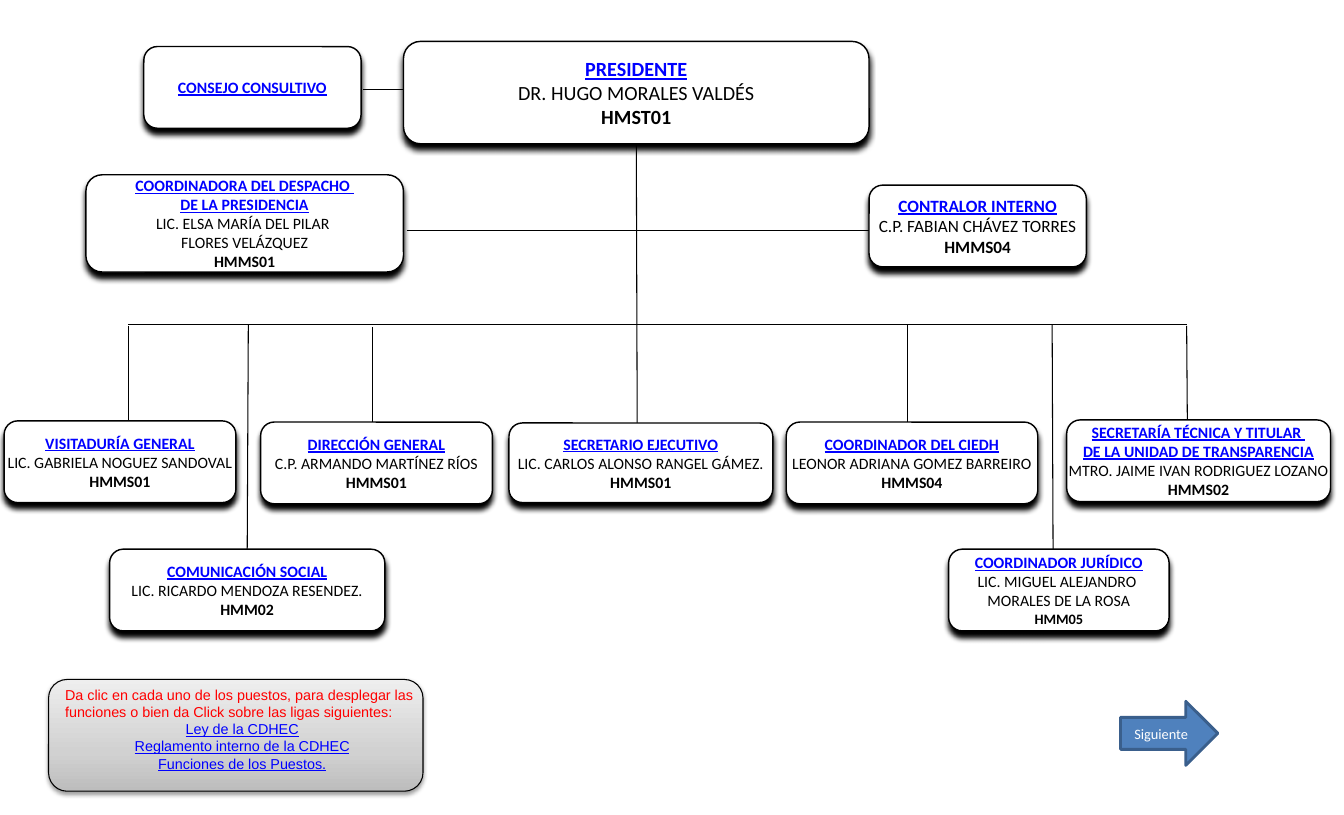
from copy import deepcopy

from pptx import Presentation
from pptx.dml.color import RGBColor
from pptx.enum import shapes, text
from pptx.oxml import parse_xml
from pptx.oxml.ns import nsdecls, qn
from pptx.util import Pt

HUES = {
    "ink": "000000", "paper": "FFFFFF", "link": "0000FF", "hint": "FF0000",
    "arrow": "4F81BD", "edge": "3A5F8C",
    "dark": "BDBDBD", "mid": "D1D1D1", "pale": "EEEEEE",
}
WIDE, HIGH = 935.28, 567.36
TALL = 56.9  # usual height of a post
BAR = 226.1  # height at which the posts branch off
AIDE = 160.6  # height of the line between the two aides

# left, top, width, height, size, titles, names, code
POSTS = {
    "general": (181.4, 293.8, 161.3, TALL, 11, ["DIRECCIÓN GENERAL"],
                ["C.P. ARMANDO MARTÍNEZ RÍOS"], "HMMS01"),
    "visits": (2.9, 293, 161.3, TALL, 11, ["VISITADURÍA GENERAL"],
               ["LIC. GABRIELA NOGUEZ SANDOVAL"], "HMMS01"),
    "head": (280.8, 28.8, 324, 71.3, 14, ["PRESIDENTE"],
             ["DR. HUGO MORALES VALDÉS"], "HMST01"),
    "audit": (604.8, 128.9, 151.2, TALL, 12, ["CONTRALOR INTERNO"],
              ["C.P. FABIAN CHÁVEZ TORRES"], "HMMS04"),
    "legal": (660.2, 382.3, 153.4, TALL, 11, ["COORDINADOR JURÍDICO"],
              ["LIC. MIGUEL ALEJANDRO ", "MORALES DE LA ROSA"], "HMM05"),
    "council": (100.1, 32.4, 151.2, TALL, 11, ["CONSEJO CONSULTIVO"], [], ""),
    "office": (59.8, 121.7, 221, 67.7, 11,
               ["COORDINADORA DEL DESPACHO ", "DE LA PRESIDENCIA"],
               ["LIC. ELSA MARÍA DEL PILAR ", "FLORES VELÁZQUEZ"], "HMMS01"),
    "press": (76.3, 382.3, 191.5, TALL, 11, ["COMUNICACIÓN SOCIAL"],
              ["LIC. RICARDO MENDOZA RESENDEZ."], "HMM02"),
    "tech": (742.3, 292.3, 183.6, TALL, 11,
             ["SECRETARÍA TÉCNICA Y TITULAR ", "DE LA UNIDAD DE TRANSPARENCIA"],
             ["MTRO. JAIME IVAN RODRIGUEZ LOZANO"], "HMMS02"),
    "centre": (547.2, 293.8, 175, TALL, 11, ["COORDINADOR DEL CIEDH"],
               ["LEONOR ADRIANA GOMEZ BARREIRO"], "HMMS04"),
    "chief": (354.2, 294.5, 183.6, 55.4, 11, ["SECRETARIO EJECUTIVO"],
              ["LIC. CARLOS ALONSO RANGEL GÁMEZ."], "HMMS01"),
}
# start x, start y, end x, end y
LINES = {
    "legal": (732.2, BAR, 733, 418.3),
    "press": (172.8, BAR, 173.5, 418.3),
    "council": (252.7, 62.6, 342.7, 62.6),
    "audit": (502.6, AIDE, 734.4, AIDE),
    "spine": (442.8, 92.9, 443.5, 310.3),
    "tech": (825.8, 226.8, 826.6, 335.5),
    "centre": (631.4, BAR, 631.4, 334.8),
    "general": (259.2, 227.5, 259.2, 336.2),
    "visits": (89.3, 226.8, 89.3, 335.5),
    "bar": (89.3, BAR, 825.8, BAR),
    "office": (283, AIDE, 502.6, AIDE),
}


def hue(name):
    return RGBColor.from_string(HUES[name])


def style(para, size, tint, font="Calibri", bold=False, under=False):
    for run in para.runs:
        run.font.name, run.font.size = font, Pt(size)
        run.font.color.rgb = hue(tint)
        run.font.bold, run.font.underline = bold, under


def shade(shape, blur, drop, alpha):
    """Give the shape a soft shadow that falls straight down."""
    shape.shadow.inherit = False
    shape._element.spPr.find(qn("a:effectLst")).append(parse_xml(
        f'<a:outerShdw {nsdecls("a")} blurRad="{Pt(blur)}" dist="{Pt(drop)}" '
        f'dir="5400000" rotWithShape="0"><a:srgbClr val="{HUES["ink"]}">'
        f'<a:alpha val="{alpha * 1000}"/></a:srgbClr></a:outerShdw>'))


def block(slide, kind, box, edge, width):
    shape = slide.shapes.add_shape(kind, *map(Pt, box))
    shape.shadow.inherit = False
    shape.line.color.rgb, shape.line.width = hue(edge), Pt(width)
    return shape


def link(slide, left, top, ends):
    x1, y1, x2, y2 = ends
    line = slide.shapes.add_connector(
        shapes.MSO_CONNECTOR.STRAIGHT,
        Pt(left + x1), Pt(top + y1), Pt(left + x2), Pt(top + y2))
    line.line.color.rgb, line.line.width = hue("ink"), Pt(0.75)
    line._element.spPr.append(parse_xml(f'<a:effectLst {nsdecls("a")}/>'))
    return line


def post(slide, box, size, titles, names, code):
    shape = block(slide, shapes.MSO_SHAPE.ROUNDED_RECTANGLE, box, "ink", 1)
    shape.fill.solid()
    shape.fill.fore_color.rgb = hue("paper")
    shade(shape, 4, 4, 100)
    frame = shape.text_frame
    frame.text = "\n".join(titles + names + ([code] if code else []))
    frame.word_wrap = False
    frame.vertical_anchor = text.MSO_ANCHOR.MIDDLE
    frame.margin_left = frame.margin_right = Pt(12)
    frame.margin_top = frame.margin_bottom = Pt(6.5)
    for i, para in enumerate(frame.paragraphs):
        para.alignment = text.PP_ALIGN.CENTER
        title = i < len(titles)
        last = i == len(titles + names)
        small = last and code == "HMM05"
        style(para, 10 if small else size, "link" if title else "ink",
              bold=title or last, under=title)
    return shape


def chart(slide, box):
    left, top = box[:2]
    lines = {key: link(slide, left, top, ends) for key, ends in LINES.items()}
    posts = {key: post(slide, (left + x, top + y, w, h), *rest)
             for key, (x, y, w, h, *rest) in POSTS.items()}
    lines["spine"].begin_connect(posts["head"], 2)
    lines["press"].end_connect(posts["press"], 0)


def note(slide, box):
    left, top, wide, high = box
    panel = block(slide, shapes.MSO_SHAPE.ROUNDED_RECTANGLE, box, "ink", 0.75)
    panel.fill.gradient()
    panel.fill.gradient_angle = 90
    stops = panel._element.spPr.find(".//" + qn("a:gsLst"))
    stops.insert(1, deepcopy(stops[0]))
    marks = [("dark", 0), ("mid", 0.35), ("pale", 1)]
    for stop, (tint, place) in zip(panel.fill.gradient_stops, marks):
        stop.color.rgb, stop.position = hue(tint), place
    shade(panel, 3.1, 1.6, 38)

    label = slide.shapes.add_textbox(
        Pt(left + 4.4), Pt(top + 0.8), Pt(wide), Pt(high - 10.1))
    frame = label.text_frame
    frame.word_wrap = True
    frame.text = "\n".join([
        "Da clic en cada uno de los puestos, para desplegar las funciones "
        "o bien da Click sobre las ligas siguientes:",
        "Ley de la CDHEC",
        "Reglamento interno de la CDHEC",
        "Funciones de los Puestos.",
    ])
    hint, *links = frame.paragraphs
    style(hint, 10, "hint", "Arial")
    for para in links:
        para.alignment = text.PP_ALIGN.CENTER
        style(para, 10, "link", "Arial", under=True)


def arrow(slide, box):
    shape = block(slide, shapes.MSO_SHAPE.RIGHT_ARROW, box, "edge", 2)
    shape.fill.solid()
    shape.fill.fore_color.rgb = hue("arrow")
    frame = shape.text_frame
    frame.text = "Siguiente"
    frame.vertical_anchor = text.MSO_ANCHOR.MIDDLE
    frame.paragraphs[0].alignment = text.PP_ALIGN.CENTER
    style(frame.paragraphs[0], 10, "paper")


def main():
    deck = Presentation()
    deck.slide_width, deck.slide_height = Pt(WIDE), Pt(HIGH)
    slide = deck.slides.add_slide(deck.slide_layouts[6])
    chart(slide, (0, 0, WIDE, HIGH))
    note(slide, (33.8, 473, 260.6, 77.8))
    arrow(slide, (779.8, 488.2, 67.7, 44.6))
    deck.save("out.pptx")


if __name__ == "__main__":
    main()
